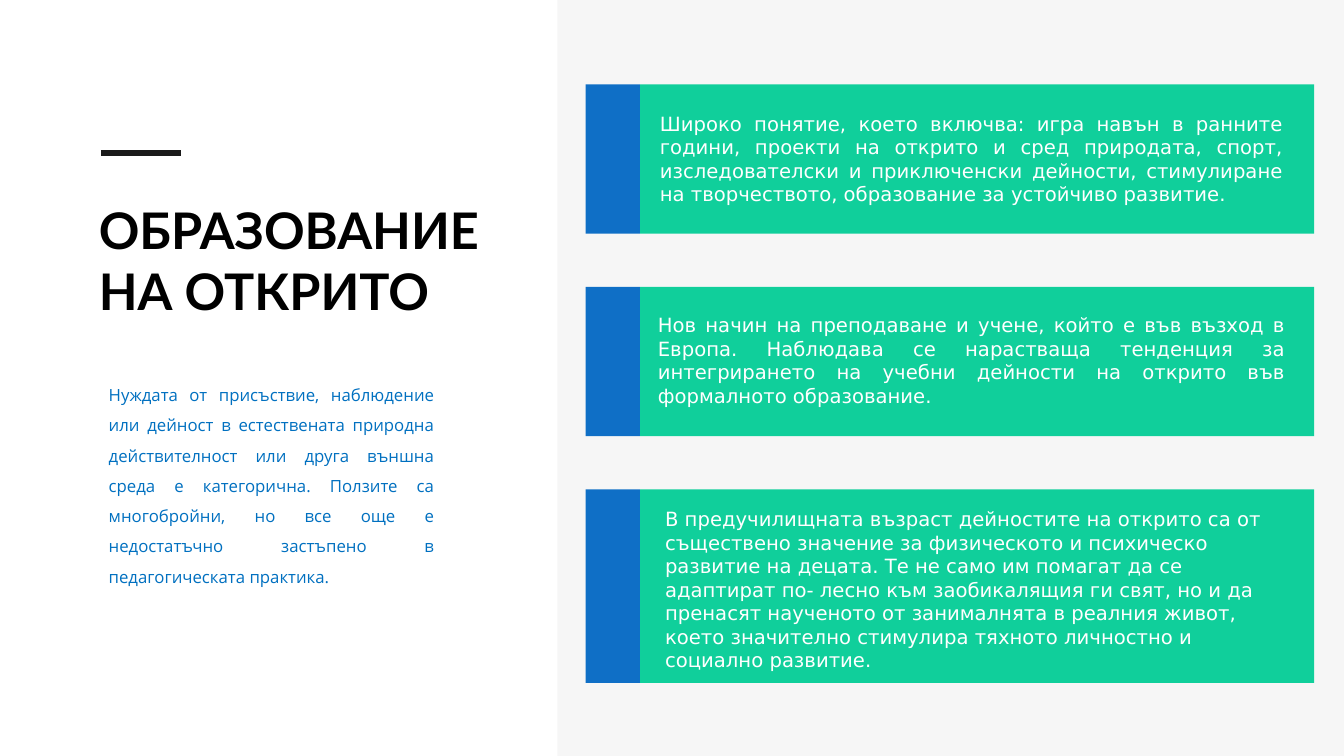
from dataclasses import dataclass
from lxml.etree import SubElement
from pptx import Presentation
from pptx.dml.color import RGBColor
from pptx.enum.shapes import MSO_CONNECTOR, MSO_SHAPE
from pptx.enum.text import MSO_AUTO_SIZE, PP_ALIGN
from pptx.oxml.ns import qn
from pptx.util import Cm, Pt


@dataclass(frozen=True)
class Theme:
    panel: str = "F2F2F2"
    card: str = "10CF9B"
    stripe: str = "0F6FC6"
    rule: str = "1A1A1A"
    title: str = "000000"
    body: str = "0070C0"
    card_text: str = "FFFFFF"
    title_font: str = "Lato"
    body_font: str = "Open Sans"
    card_font: str = "DejaVu Sans"
    title_size: int = 36
    body_size: int = 12
    card_size: int = 14
    rule_width: float = 4.5


class SlideBuilder:
    def __init__(self, s, theme):
        self.s = s
        self.theme = theme

    def rect(self, x, y, w, h, color, opacity=None):
        sp = self.s.shapes.add_shape(MSO_SHAPE.RECTANGLE, Cm(x), Cm(y), Cm(w), Cm(h))
        sp.shadow.inherit = False
        sp.fill.solid()
        sp.fill.fore_color.rgb = RGBColor.from_string(color)
        sp.line.fill.background()
        if opacity is not None:
            clr = next(sp.fill._xPr.iter(qn("a:srgbClr")))
            SubElement(clr, qn("a:alpha"), val=str(opacity * 1000))

    def rule(self, x1, x2, y):
        line = self.s.shapes.add_connector(
            MSO_CONNECTOR.STRAIGHT, Cm(x1), Cm(y), Cm(x2), Cm(y))
        line.line.color.rgb = RGBColor.from_string(self.theme.rule)
        line.line.width = Pt(self.theme.rule_width)
        SubElement(line._element.spPr, qn("a:effectLst"))

    def text(self, box, text, font, size, color, bold=False,
             align=PP_ALIGN.LEFT, spacing=None):
        tf = self.s.shapes.add_textbox(*map(Cm, box)).text_frame
        tf.word_wrap = True
        tf.auto_size = MSO_AUTO_SIZE.SHAPE_TO_FIT_TEXT
        tf.text = text
        p = tf.paragraphs[0]
        p.alignment = align
        p.line_spacing = spacing
        r = p.runs[0]
        r.font.name = font
        r.font.size = Pt(size)
        r.font.bold = bold
        r.font.color.rgb = RGBColor.from_string(color)

    def card(self, y, h, box, text, align):
        t = self.theme
        self.rect(16.13, y, 16.99, h, t.card)
        self.rect(14.76, y, 1.37, h, t.stripe)
        self.text(box, text, t.card_font, t.card_size, t.card_text, align=align)


TITLE = "ОБРАЗОВАНИЕ НА ОТКРИТО"
BODY = (
    "Нуждата от присъствие, наблюдение или дейност в естествената природна "
    "действителност или друга външна среда е категорична. Ползите са "
    "многобройни, но все още е недостатъчно застъпено в педагогическата практика."
)
CARDS = [
    (3.76, (16.38, 2.69, 16.21, 2.64), PP_ALIGN.JUSTIFY,
     "Широко понятие, което включва: игра навън в ранните години, проекти на "
     "открито и сред природата, спорт, изследователски и приключенски дейности, "
     "стимулиране на творчеството, образование за устойчиво развитие."),
    (3.76, (16.33, 7.77, 16.31, 2.64), PP_ALIGN.JUSTIFY,
     "Нов начин на преподаване и учене, който е във възход в Европа. Наблюдава се "
     "нарастваща тенденция за интегрирането на учебни дейности на открито във "
     "формалното образование."),
    (4.88, (16.51, 12.65, 16.26, 4.45), PP_ALIGN.LEFT,
     "В предучилищната възраст дейностите на открито са от съществено значение за "
     "физическото и психическо развитие на децата. Те не само им помагат да се "
     "адаптират по- лесно към заобикалящия ги свят, но и да пренасят наученото от "
     "занималнята в реалния живот, което значително стимулира тяхното личностно и "
     "социално развитие."),
]


def main():
    prs = Presentation()
    prs.slide_width, prs.slide_height = Cm(33.87), Cm(19.05)
    t = Theme()
    b = SlideBuilder(prs.slides.add_slide(prs.slide_layouts[6]), t)
    b.rect(14.05, 0, 19.82, 19.05, t.panel, opacity=65)
    b.text((2.49, 9.32, 8.71, 4.88), BODY, t.body_font, t.body_size, t.body,
           align=PP_ALIGN.JUSTIFY, spacing=1.5)
    b.text((2.24, 4.9, 10.69, 3.33), TITLE, t.title_font, t.title_size, t.title,
           bold=True)
    b.rule(2.54, 4.55, 3.86)
    for i, (height, box, align, text) in enumerate(CARDS):
        b.card(2.13 + i * 5.1, height, box, text, align)
    prs.save("out.pptx")


if __name__ == "__main__":
    main()
